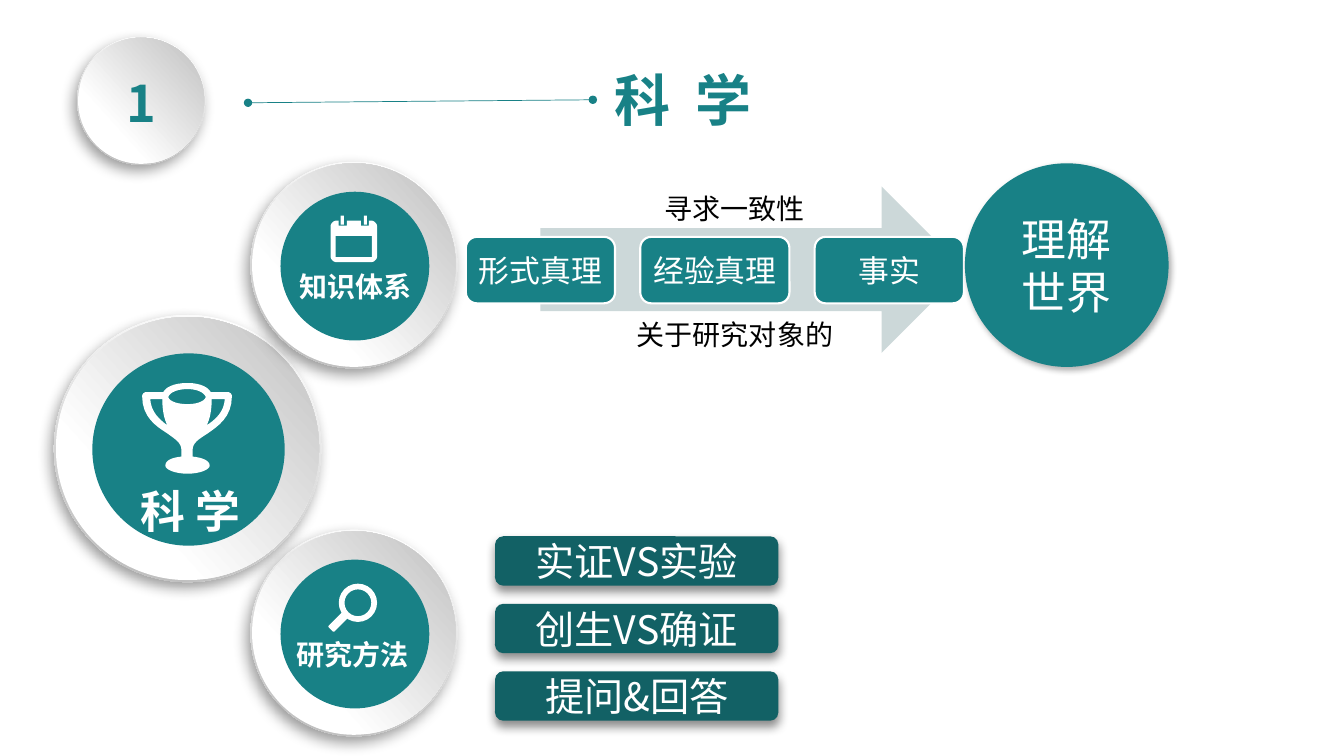
from lxml import etree
from pptx import Presentation
from pptx.dml.color import RGBColor
from pptx.enum.shapes import MSO_CONNECTOR, MSO_SHAPE as Shape
from pptx.enum.text import MSO_ANCHOR as Anchor, PP_ALIGN as Align
from pptx.oxml.ns import qn
from pptx.util import Inches, Pt

FONT = "Noto Sans CJK SC"
TEAL, DARK_TEAL, PALE, WHITE, BLACK = "188186", "126165", "CCD8D9", "FFFFFF", "000000"

# Shadows: opacity %, blur pt, distance pt, direction in degrees
DISC_SHADOW = (39, 10, 5, 123)
BAR_SHADOW = (46, 7, 4, 90)
GOAL_SHADOW = (30, 4.5, 2.6, 53)

# Discs: centre x, centre y, diameter
BADGE = (1.4, 1.0, 1.27)
METHOD = (3.51, 6.28, 2.05)
SCIENCE = (1.86, 4.45, 2.65)
KNOWLEDGE = (3.51, 2.63, 2.05)

TRUTHS = ["形式真理", "经验真理", "事实"]
METHODS = ["实证VS实验", "创生VS确证", "提问&回答"]

# Icon contours: a pair is a corner, six numbers are a Bézier curve
TROPHY = [
    [(1.91, 4.47), (1.91, 4.39, 1.97, 4.36, 2.06, 4.3), (2.16, 4.23, 2.3, 4.14, 2.3, 3.93),
     (2.3, 3.91, 2.28, 3.89, 2.26, 3.89), (2.09, 3.89), (2.07, 3.85, 2, 3.8, 1.86, 3.8),
     (1.71, 3.8, 1.64, 3.85, 1.62, 3.89), (1.45, 3.89), (1.43, 3.89, 1.41, 3.91, 1.41, 3.93),
     (1.41, 4.14, 1.55, 4.23, 1.66, 4.3), (1.74, 4.36, 1.8, 4.39, 1.8, 4.47), (1.8, 4.53),
     (1.7, 4.54, 1.64, 4.57, 1.64, 4.62), (1.64, 4.66, 1.74, 4.7, 1.86, 4.7),
     (1.98, 4.7, 2.08, 4.66, 2.08, 4.62), (2.08, 4.57, 2.01, 4.54, 1.91, 4.53)],
    [(2.05, 4.22), (2.08, 4.16, 2.1, 4.08, 2.1, 3.96), (2.23, 3.96),
     (2.22, 4.09, 2.14, 4.16, 2.05, 4.22)],
    [(1.86, 3.86), (1.99, 3.86, 2.04, 3.92, 2.04, 3.94), (2.04, 3.96, 1.99, 4.01, 1.86, 4.01),
     (1.72, 4.01, 1.67, 3.96, 1.67, 3.94), (1.67, 3.92, 1.72, 3.86, 1.86, 3.86)],
    [(1.49, 3.96), (1.61, 3.96), (1.61, 4.08, 1.63, 4.16, 1.66, 4.22),
     (1.58, 4.16, 1.5, 4.09, 1.49, 3.96)],
]
CALENDAR = [
    [(3.69, 2.19), (3.66, 2.19), (3.66, 2.24), (3.58, 2.24), (3.58, 2.19), (3.44, 2.19),
     (3.44, 2.24), (3.36, 2.24), (3.36, 2.19), (3.33, 2.19), (3.31, 2.19, 3.28, 2.22, 3.28, 2.24),
     (3.28, 2.55), (3.28, 2.57, 3.31, 2.6, 3.33, 2.6), (3.69, 2.6),
     (3.71, 2.6, 3.74, 2.57, 3.74, 2.55), (3.74, 2.24), (3.74, 2.22, 3.71, 2.19, 3.69, 2.19)],
    [(3.69, 2.55), (3.33, 2.55), (3.33, 2.34), (3.69, 2.34)],
    [(3.41, 2.14), (3.38, 2.14), (3.38, 2.23), (3.41, 2.23)],
    [(3.64, 2.14), (3.61, 2.14), (3.61, 2.23), (3.64, 2.23)],
]

deck = Presentation()
deck.slide_width, deck.slide_height = Inches(13.33), Inches(7.5)
page = deck.slides.add_slide(deck.slide_layouts[6])


def color(value):
    return RGBColor.from_string(value)


def add_child(parent, tag, **attributes):
    return etree.SubElement(parent, qn(tag), {key: str(value) for key, value in attributes.items()})


def cast_shadow(shape, opacity, blur, distance, direction):
    effects = shape._element.spPr.find(qn("a:effectLst"))
    outer = add_child(effects, "a:outerShdw", blurRad=Pt(blur), dist=Pt(distance),
                      dir=direction * 60000, algn="ctr", rotWithShape=0)
    tint = add_child(outer, "a:srgbClr", val=BLACK)
    add_child(tint, "a:alpha", val=opacity * 1000)


def style(shape, fill, line=None, shadow=None):
    shape.shadow.inherit = False
    if fill:
        shape.fill.solid()
        shape.fill.fore_color.rgb = color(fill)
    if line:
        shape.line.color.rgb = color(line)
        shape.line.width = Pt(1.5)
    else:
        shape.line.fill.background()
    if shadow:
        cast_shadow(shape, *shadow)
    return shape


def add_shape(kind, left, top, width, height, fill=None, **looks):
    shape = page.shapes.add_shape(kind, *map(Inches, (left, top, width, height)))
    return style(shape, fill, **looks)


def write(shape, text, size, ink=WHITE, bold=False, align=Align.CENTER, anchor=Anchor.MIDDLE,
          spacing=None):
    frame = shape.text_frame
    frame.word_wrap = True
    frame.vertical_anchor = anchor
    para = frame.paragraphs[0]
    para.alignment = align
    span = para.add_run()
    span.text = text
    span.font.name, span.font.size, span.font.bold = FONT, Pt(size), bold
    span.font.color.rgb = color(ink)
    properties = span.font._element
    add_child(properties, "a:ea", typeface=FONT)
    if spacing:
        properties.set("spc", str(spacing * 100))


def add_label(text, left, top, width, height, **format):
    box = page.shapes.add_textbox(*map(Inches, (left, top, width, height)))
    write(box, text, anchor=Anchor.TOP, **format)


def add_circle(center_x, center_y, size, fill=None, **looks):
    return add_shape(Shape.OVAL, center_x - size / 2, center_y - size / 2, size, size, fill, **looks)


def add_disc(center_x, center_y, size, core=True):
    """A raised rim of two shaded circles, with a teal core."""
    layers = [(size, 62.3, ((0.17, WHITE), (0.88, "B8B8B8")), DISC_SHADOW),
              (size * 0.985, 273, ((0.29, WHITE), (0.98, "BFBFBF")), None)]
    for diameter, rotation, stops, shadow in layers:
        circle = add_circle(center_x, center_y, diameter, shadow=shadow)
        circle.rotation = rotation
        circle.fill.gradient()
        circle.fill.gradient_angle = 315
        for stop, (position, shade) in zip(circle.fill.gradient_stops, stops):
            stop.position = position
            stop.color.rgb = color(shade)
    if core:
        add_circle(center_x + 0.01, center_y + 0.01, size * 0.72, TEAL)


def trace(contour, steps=8):
    """Turn corners and Bézier curves into a list of points."""
    points = [contour[0]]
    for part in contour[1:]:
        if len(part) == 2:
            points.append(part)
            continue
        knots = [points[-1], part[:2], part[2:4], part[4:]]
        for step in range(1, steps + 1):
            t = step / steps
            weights = ((1 - t) ** 3, 3 * t * (1 - t) ** 2, 3 * t * t * (1 - t), t ** 3)
            points.append(tuple(sum(w * knot[axis] for w, knot in zip(weights, knots))
                                for axis in (0, 1)))
    return [(Inches(x), Inches(y)) for x, y in points]


def add_icon(contours):
    outlines = [trace(contour) for contour in contours]
    builder = page.shapes.build_freeform(*outlines[0][0])
    for number, outline in enumerate(outlines):
        if number:
            builder.move_to(*outline[0])
        builder.add_line_segments(outline[1:], close=True)
    style(builder.convert_to_shape(), WHITE)


# Heading
add_disc(*BADGE, core=False)
add_label("1", 0.74, 0.67, 1.32, 0.71, size=36, ink=TEAL, bold=True)
add_label("科 学", 6, 0.6, 1.87, 0.77, size=40, ink=TEAL, bold=True, align=Align.LEFT, spacing=4.5)

# Discs with icons
add_disc(*METHOD)
lens = add_shape(Shape.DONUT, 3.36, 5.79, 0.38, 0.38, WHITE)
lens.adjustments[0] = 0.15
handle = add_shape(Shape.ROUNDED_RECTANGLE, 3.25, 6.13, 0.21, 0.08, WHITE)
handle.rotation = 315
add_label("研究方法", 2.76, 6.28, 1.47, 0.44, size=20, bold=True)

add_disc(*SCIENCE)
add_icon(TROPHY)
add_label("科 学", 1.1, 4.75, 1.58, 0.64, size=32, bold=True)

add_disc(*KNOWLEDGE)
add_icon(CALENDAR)
add_label("知识体系", 2.86, 2.62, 1.33, 0.44, size=20, bold=True)

# Knowledge row
add_shape(Shape.RIGHT_ARROW, 5.36, 1.85, 4.21, 1.65, PALE)
for column, truth in enumerate(TRUTHS):
    tile = add_shape(Shape.ROUNDED_RECTANGLE, 4.62 + 1.73 * column, 2.35, 1.48, 0.66, TEAL, line=WHITE)
    write(tile, truth, 22)
    tile.text_frame.margin_left = tile.text_frame.margin_right = Inches(0.05)
add_label("寻求一致性", 6.31, 1.85, 1.95, 0.44, size=20, ink=BLACK)
add_label("关于研究对象的", 6.13, 3.1, 2.32, 0.44, size=20, ink=BLACK)
goal = add_circle(10.58, 2.63, 2.02, TEAL, shadow=GOAL_SHADOW)
write(goal, "理解世界", 32)

# Method bars
for row, method in enumerate(METHODS):
    bar = add_shape(Shape.ROUNDED_RECTANGLE, 4.91, 5.32 + 0.67 * row, 2.81, 0.49, DARK_TEAL,
                    shadow=BAR_SHADOW)
    write(bar, method, 28)

# Heading line
rule = page.shapes.add_connector(MSO_CONNECTOR.STRAIGHT, *map(Inches, (2.46, 1.02, 5.88, 0.99)))
rule.line.color.rgb = color(TEAL)
rule.line.width = Pt(0.5)
for end in ("a:headEnd", "a:tailEnd"):
    add_child(rule.line._get_or_add_ln(), end, type="oval")
add_child(rule._element.spPr, "a:effectLst")

deck.save("out.pptx")
